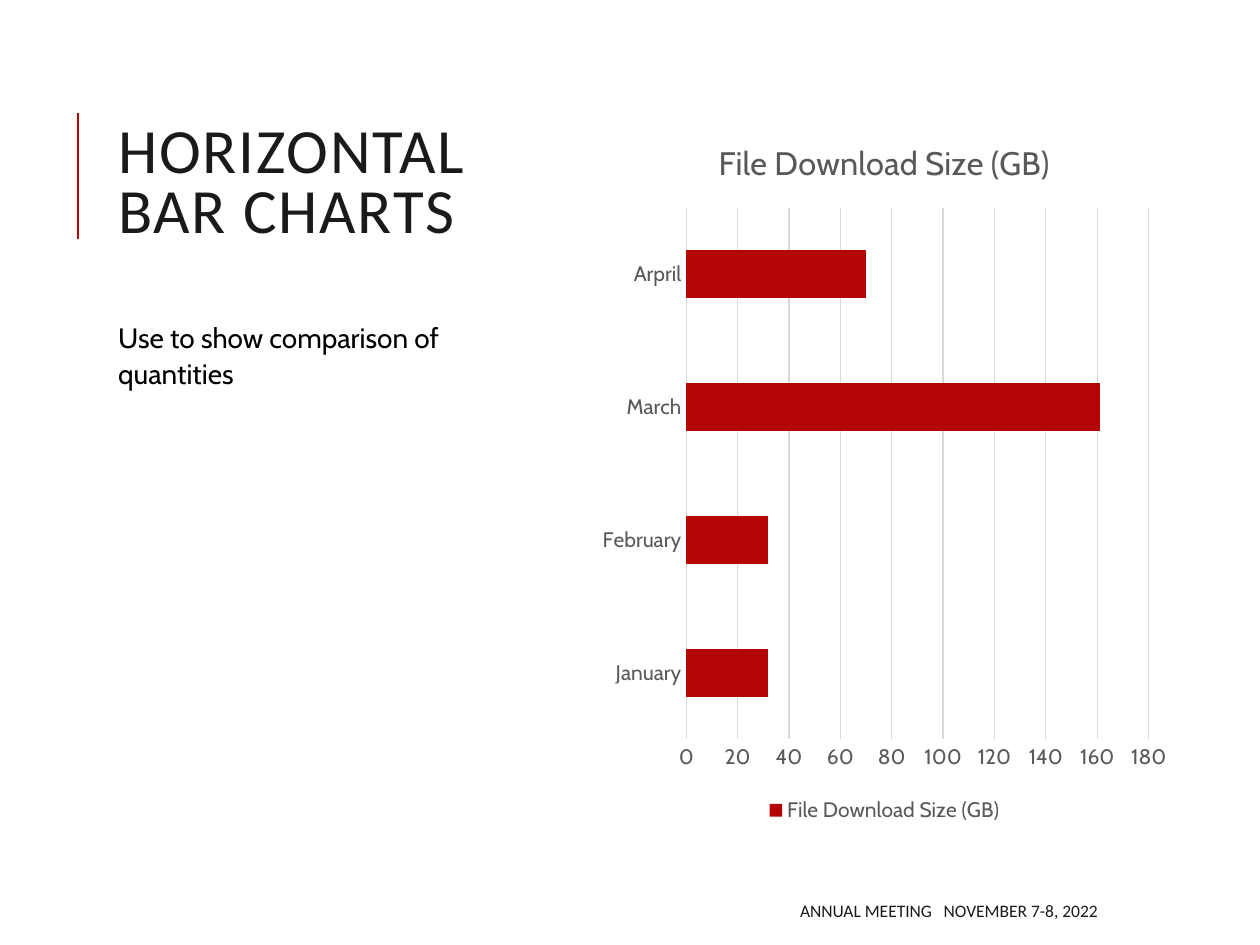
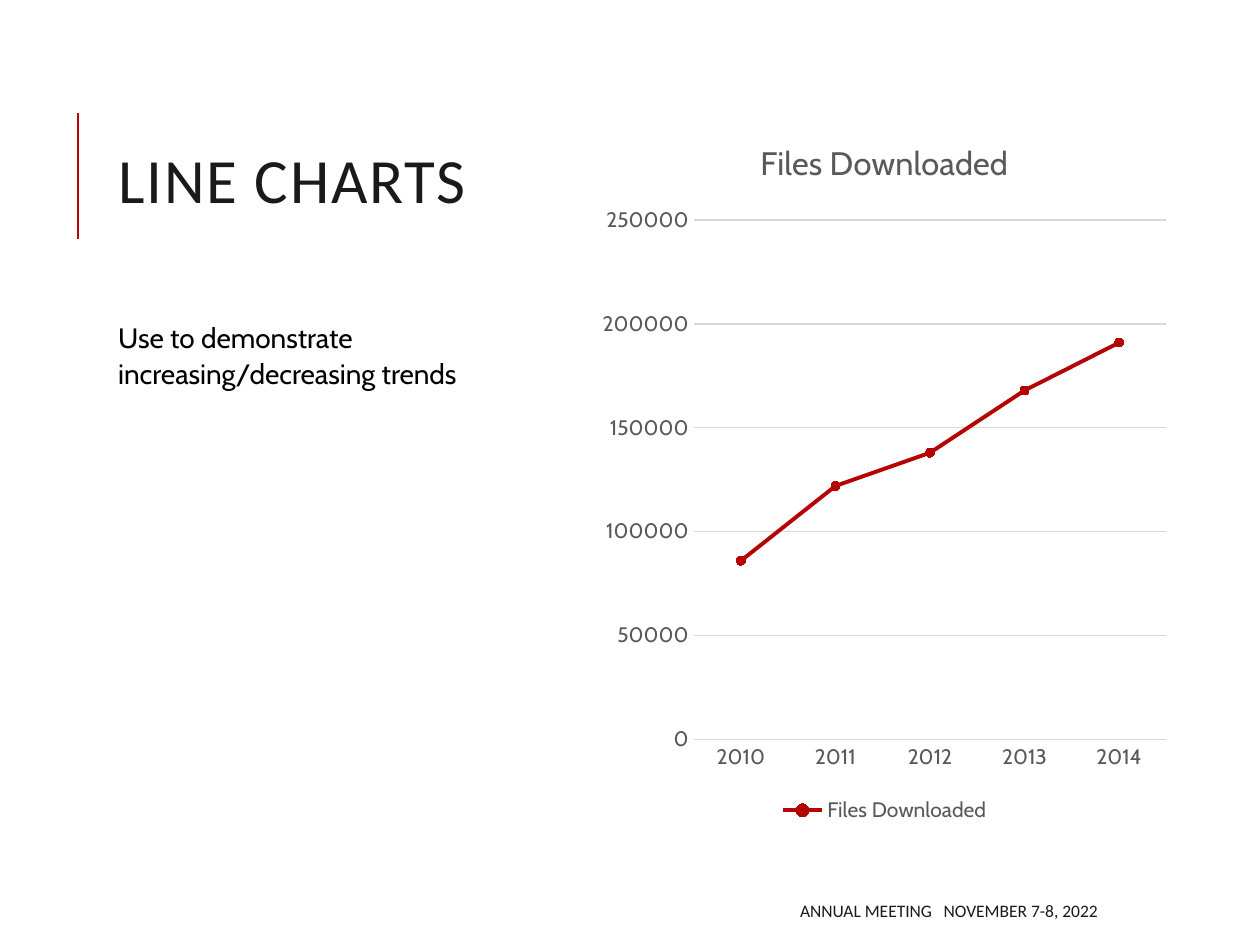
import pptx
import pptx.chart.data
import pptx.dml.color
import pptx.enum.chart
import pptx.enum.shapes
import pptx.enum.text
import pptx.util
from lxml import etree
from pptx.util import Inches

RED, INK, BLACK, GREY, RULE = "B40404", "1A1A1A", "000000", "595959", "D9D9D9"
HEAD_FONT, BODY_FONT = "Calibri", "Cabin"
TITLE_ONLY = 5
ChartType = pptx.enum.chart.XL_CHART_TYPE
Align = pptx.enum.text.PP_ALIGN
Anchor = pptx.enum.text.MSO_ANCHOR


def paint(target, color):
    """Give a fill, or the colour of a font, a solid hex colour."""
    fill = getattr(target, "fill", target)
    fill.solid()
    fill.fore_color.rgb = pptx.dml.color.RGBColor.from_string(color)


def add_text(paragraph, text, size, font=BODY_FONT, color=BLACK, spacing=0):
    """Add a run; spacing is the extra space after each letter in points."""
    run = paragraph.add_run()
    run.text = text
    run.font.name = font
    run.font.size = pptx.util.Pt(size)
    run.font.bold = False
    paint(run.font, color)
    if spacing:
        run.font._element.set("spc", str(int(spacing * 100)))


slides = [
    {
        "title": "HORIZONTAL BAR CHARTS",
        "body": "Use to show comparison of quantities",
        "type": ChartType.BAR_CLUSTERED,
        "series": "File Download Size (GB)",
        "values": {"January": 32, "February": 32, "March": 161, "Arpril": 70},
    },
    {
        "title": "LINE CHARTS",
        "body": "Use to demonstrate increasing/decreasing trends",
        "type": ChartType.LINE_MARKERS,
        "series": "Files Downloaded",
        "values": {"2010": 86000, "2011": 122000, "2012": 138000,
                   "2013": 168000, "2014": 191000},
    },
]

presentation = pptx.Presentation()
presentation.slide_width = Inches(10)
presentation.slide_height = Inches(7.5)

for content in slides:
    slide = presentation.slides.add_slide(presentation.slide_layouts[TITLE_ONLY])

    # Accent line beside the title
    accent = slide.shapes.add_connector(
        pptx.enum.shapes.MSO_CONNECTOR.STRAIGHT,
        Inches(0.62), Inches(1.9), Inches(0.62), Inches(0.9))
    paint(accent.line, RED)
    accent.line.width = pptx.util.Pt(1.5)
    etree.SubElement(accent._element.spPr, pptx.oxml.ns.qn("a:effectLst"))

    # Title, body and footer
    title = slide.shapes.title
    title.left, title.top = Inches(0.84), Inches(0.52)
    title.width, title.height = Inches(3.6), Inches(1.9)
    body = slide.shapes.add_textbox(
        Inches(0.84), Inches(2.47), Inches(3.6), Inches(4.11))
    footer = slide.shapes.add_textbox(
        Inches(3.97), Inches(7.08), Inches(4.84), Inches(0.3))
    for shape, anchor, alignment in (
            (title, Anchor.MIDDLE, Align.LEFT),
            (body, Anchor.TOP, Align.LEFT),
            (footer, Anchor.MIDDLE, Align.RIGHT)):
        frame = shape.text_frame
        frame.word_wrap = True
        frame.auto_size = pptx.enum.text.MSO_AUTO_SIZE.NONE
        frame.vertical_anchor = anchor
        frame.paragraphs[0].alignment = alignment

    paragraph = title.text_frame.paragraphs[0]
    paragraph.line_spacing = 0.8
    add_text(paragraph, content["title"], 36, HEAD_FONT, INK, spacing=1)

    paragraph = body.text_frame.paragraphs[0]
    paragraph.line_spacing = 1.08
    paragraph.space_before = pptx.util.Pt(6)
    paragraph.space_after = pptx.util.Pt(2)
    add_text(paragraph, content["body"], 16)

    paragraph = footer.text_frame.paragraphs[0]
    for text, spacing in (("ANNUAL MEETING", 0), (" ", 4.5),
                          ("NOVEMBER 7-8, 2022", 0)):
        add_text(paragraph, text, 10, HEAD_FONT, INK, spacing)

    # Chart
    data = pptx.chart.data.CategoryChartData()
    data.categories = list(content["values"])
    data.add_series(content["series"], list(content["values"].values()))
    chart = slide.shapes.add_chart(
        content["type"], Inches(4.69), Inches(0.9),
        Inches(4.66), Inches(5.67), data).chart
    chart.font.name = BODY_FONT
    chart.font.size = pptx.util.Pt(10)
    paint(chart.font, BLACK)

    chart.has_title = True
    add_text(chart.chart_title.text_frame.paragraphs[0], content["series"],
             18.6, color=GREY)
    chart.chart_title.include_in_layout = False
    chart.has_legend = True
    chart.legend.position = pptx.enum.chart.XL_LEGEND_POSITION.BOTTOM
    chart.legend.include_in_layout = False

    category_axis, value_axis = chart.category_axis, chart.value_axis
    for font in (category_axis.tick_labels.font, value_axis.tick_labels.font,
                 chart.legend.font):
        font.name = BODY_FONT
        font.size = pptx.util.Pt(12)
        paint(font, GREY)
    for axis in (category_axis, value_axis):
        axis.major_tick_mark = pptx.enum.chart.XL_TICK_MARK.NONE
        axis.minor_tick_mark = pptx.enum.chart.XL_TICK_MARK.NONE
    category_axis.has_major_gridlines = False
    value_axis.has_major_gridlines = True
    value_axis.format.line.fill.background()
    for line in (category_axis.format.line, value_axis.major_gridlines.format.line):
        paint(line, RULE)
        line.width = pptx.util.Pt(0.75)

    plot = chart.plots[0]
    plot.vary_by_categories = False
    series = plot.series[0]
    if content["type"] == ChartType.BAR_CLUSTERED:
        plot.gap_width = 182
        paint(series.format, RED)
    else:
        series.smooth = False
        paint(series.format.line, RED)
        series.format.line.width = pptx.util.Pt(2.25)
        series.marker.style = pptx.enum.chart.XL_MARKER_STYLE.CIRCLE
        series.marker.size = 5
        paint(series.marker.format, RED)
        paint(series.marker.format.line, RED)

presentation.save("out.pptx")
